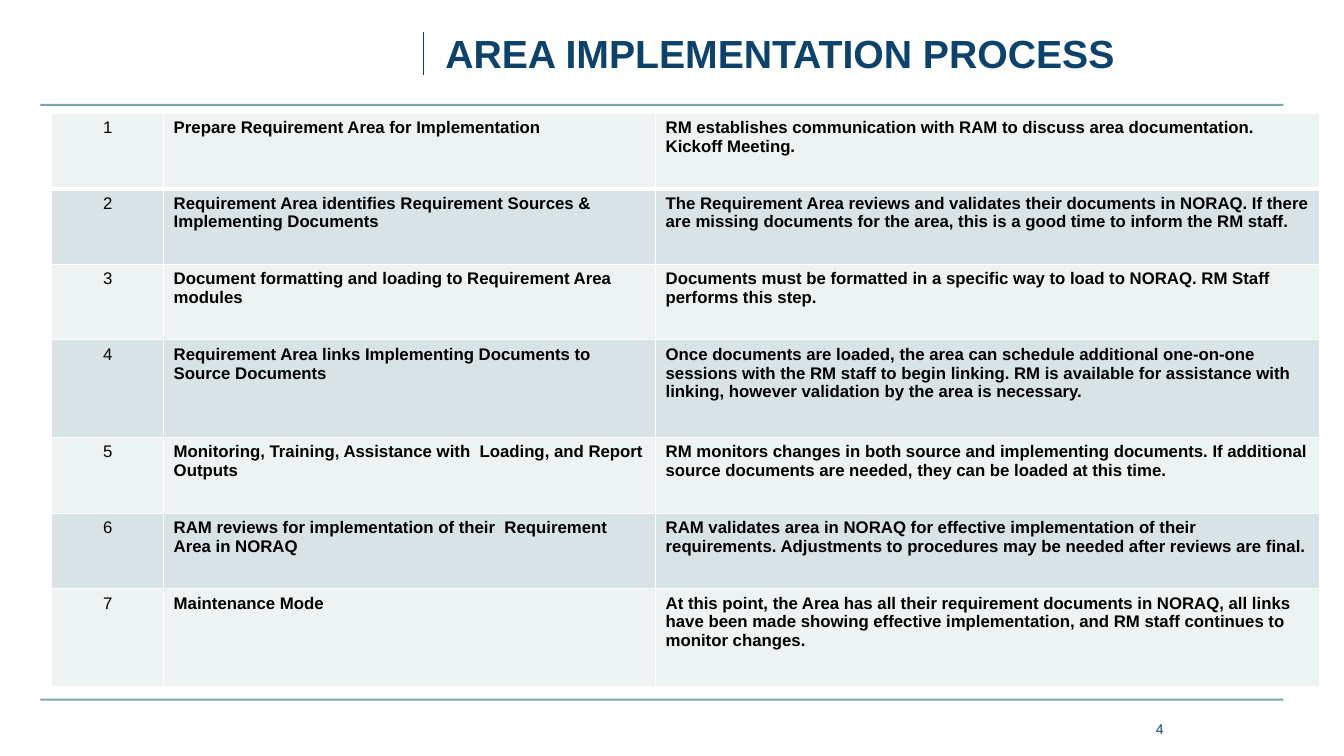
"""Build the area implementation process slide."""
from lxml import etree
from pptx import Presentation
from pptx.dml.color import RGBColor
from pptx.enum.shapes import MSO_CONNECTOR, MSO_SHAPE
from pptx.enum.text import MSO_ANCHOR, PP_ALIGN
from pptx.oxml.ns import qn
from pptx.util import Pt

LEFT, CENTER = PP_ALIGN.LEFT, PP_ALIGN.CENTER
TOP, MIDDLE = MSO_ANCHOR.TOP, MSO_ANCHOR.MIDDLE
RECTANGLE, STRAIGHT = MSO_SHAPE.RECTANGLE, MSO_CONNECTOR.STRAIGHT

COLORS = {
    "navy": "0D436B",
    "divider": "00406C",
    "rule": "7BA6AD",
    "light": "EDF2F2",
    "dark": "D9E3E5",
    "black": "000000",
    "white": "FFFFFF",
}
TITLE = "AREA IMPLEMENTATION PROCESS"
PAGE_NUMBER = "4"
STEPS = [
    ("Prepare Requirement Area for Implementation",
     "RM establishes communication with RAM to discuss area documentation. Kickoff Meeting."),
    ("Requirement Area identifies Requirement Sources & Implementing Documents",
     "The Requirement Area reviews and validates their documents in NORAQ. If there are missing "
     "documents for the area, this is a good time to inform the RM staff."),
    ("Document formatting and loading to Requirement Area modules",
     "Documents must be formatted in a specific way to load to NORAQ. RM Staff performs this step."),
    ("Requirement Area links Implementing Documents to Source Documents",
     "Once documents are loaded, the area can schedule additional one-on-one sessions with the RM "
     "staff to begin linking. RM is available for assistance with linking, however validation by "
     "the area is necessary."),
    ("Monitoring, Training, Assistance with  Loading, and Report Outputs",
     "RM monitors changes in both source and implementing documents. If additional source "
     "documents are needed, they can be loaded at this time."),
    ("RAM reviews for implementation of their  Requirement Area in NORAQ",
     "RAM validates area in NORAQ for effective implementation of their requirements. Adjustments "
     "to procedures may be needed after reviews are final."),
    ("Maintenance Mode",
     "At this point, the Area has all their requirement documents in NORAQ, all links have been "
     "made showing effective implementation, and RM staff continues to monitor changes."),
]
COLUMN_WIDTHS = (80, 351.4, 474.5)
ROW_HEIGHTS = (54, 54, 54, 69.8, 54, 54, 69.8)
RULE_TOPS = (74.2, 499)


def color(name):
    return RGBColor.from_string(COLORS[name])


def write(frame, text, size, tint, bold=False, align=LEFT, spacing=1.0):
    para = frame.paragraphs[0]
    para.alignment, para.line_spacing = align, spacing
    span = para.add_run()
    span.text = text
    formats = {"name": "Arial", "size": Pt(size), "bold": bold}
    for key, value in formats.items():
        setattr(span.font, key, value)
    span.font.color.rgb = color(tint)


def add_text(page, place, text, anchor, **style):
    box = page.shapes.add_textbox(*map(Pt, place))
    frame = box.text_frame
    frame.word_wrap, frame.vertical_anchor = True, anchor
    write(frame, text, **style)


def add_rule(page, top):
    rule = page.shapes.add_shape(RECTANGLE, Pt(28.8), Pt(top), Pt(888), Pt(1.44))
    rule.shadow.inherit = False
    rule.fill.solid()
    rule.fill.fore_color.rgb = color("rule")
    rule.line.fill.background()


def add_divider(page):
    divider = page.shapes.add_connector(STRAIGHT, Pt(302.4), Pt(23), Pt(302.4), Pt(53.3))
    divider.line.color.rgb = color("divider")
    divider.line.width = Pt(0.5)
    etree.SubElement(divider.element.spPr, qn("a:effectLst"))


def set_borders(cell, widths):
    properties = cell._tc.get_or_add_tcPr()
    for position, (side, width) in enumerate(widths.items()):
        border = etree.Element(qn(f"a:ln{side}"), w=str(Pt(width)))
        fill = etree.SubElement(border, qn("a:solidFill"))
        etree.SubElement(fill, qn("a:srgbClr"), val=COLORS["white"])
        properties.insert(position, border)


def add_steps(page):
    holder = page.shapes.add_table(
        len(STEPS), len(COLUMN_WIDTHS), Pt(36.9), Pt(80.8),
        Pt(sum(COLUMN_WIDTHS)), Pt(sum(ROW_HEIGHTS)))
    table = holder.table
    for column, width in zip(table.columns, COLUMN_WIDTHS):
        column.width = Pt(width)
    for index, (row, height, step) in enumerate(zip(table.rows, ROW_HEIGHTS, STEPS)):
        row.height = Pt(height)
        borders = {"L": 1, "R": 1, "T": 3 if index == 1 else 1, "B": 3 if index == 0 else 1}
        for place, (cell, text) in enumerate(zip(row.cells, (str(index + 1), *step))):
            cell.fill.solid()
            cell.fill.fore_color.rgb = color("dark" if index % 2 else "light")
            set_borders(cell, borders)
            write(cell.text_frame, text, 12, "black", bold=place > 0,
                  align=LEFT if place else CENTER)


def main():
    deck = Presentation()
    deck.slide_width, deck.slide_height = Pt(960), Pt(540)
    page = deck.slides.add_slide(deck.slide_layouts[6])
    for top in RULE_TOPS:
        add_rule(page, top)
    add_divider(page)
    add_text(page, (791.3, 511.2, 74.2, 19.4), PAGE_NUMBER, TOP,
             size=10, tint="navy", align=CENTER)
    add_text(page, (311, 3.6, 648.7, 72), TITLE, MIDDLE,
             size=28, tint="navy", bold=True, spacing=0.9)
    add_steps(page)
    deck.save("out.pptx")


if __name__ == "__main__":
    main()
